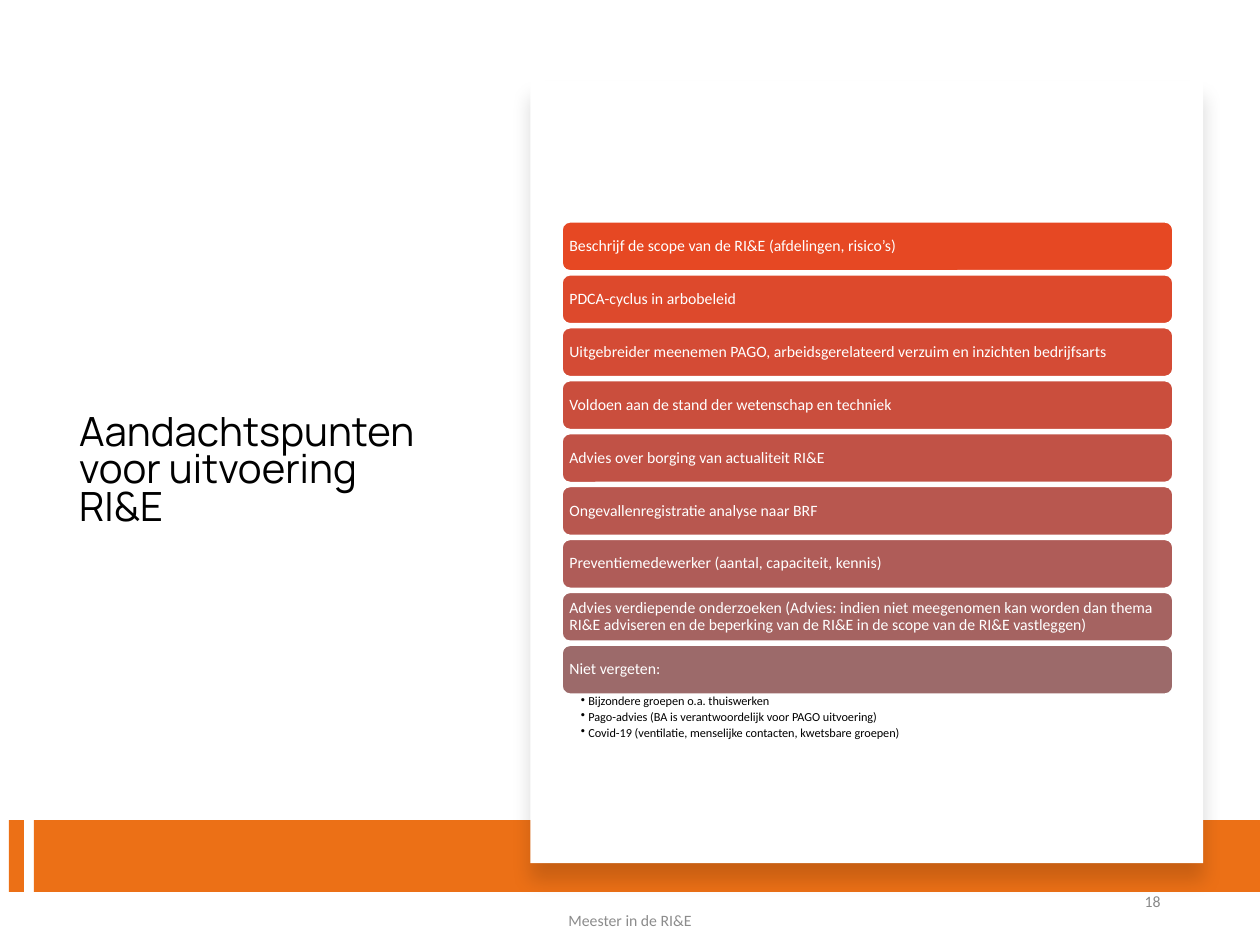
"""Build the slide with points of attention for carrying out an RI&E."""
from lxml import etree
from pptx import Presentation
from pptx.dml.color import RGBColor
from pptx.enum.shapes import MSO_SHAPE
from pptx.enum.text import MSO_ANCHOR, PP_ALIGN
from pptx.oxml.ns import qn
from pptx.util import Inches, Pt

RECT, ROUND = MSO_SHAPE.RECTANGLE, MSO_SHAPE.ROUNDED_RECTANGLE
LEFT, MID, RIGHT = PP_ALIGN.LEFT, PP_ALIGN.CENTER, PP_ALIGN.RIGHT
TOP, MIDDLE = MSO_ANCHOR.TOP, MSO_ANCHOR.MIDDLE

COLORS = {
    "orange": "EC7016", "white": "FFFFFF", "black": "000000",
    "foot": "8C8C8C", "number": "898989",
}
BARS = [
    ("E64823", "Beschrijf de scope van de RI&E (afdelingen, risico’s)"),
    ("DD492C", "PDCA-cyclus in arbobeleid"),
    ("D44B35", "Uitgebreider meenemen PAGO, arbeidsgerelateerd verzuim en inzichten bedrijfsarts"),
    ("CA4E3D", "Voldoen aan de stand der wetenschap en techniek"),
    ("C15246", "Advies over borging van actualiteit RI&E"),
    ("B8574F", "Ongevallenregistratie analyse naar BRF"),
    ("AF5C58", "Preventiemedewerker (aantal, capaciteit, kennis)"),
    ("A56361", "Advies verdiepende onderzoeken (Advies: indien niet meegenomen kan worden "
               "dan thema RI&E adviseren en de beperking van de RI&E in de scope van de "
               "RI&E vastleggen)"),
    ("9C6A6A", "Niet vergeten:"),
]
NOTES = [
    "Bijzondere groepen o.a. thuiswerken",
    "Pago-advies (BA is verantwoordelijk voor PAGO uitvoering)",
    "Covid-19 (ventilatie, menselijke contacten, kwetsbare groepen)",
]

deck = Presentation()
deck.slide_width, deck.slide_height = Inches(10), Inches(7.5)
slide = deck.slides.add_slide(deck.slide_layouts[6])


def add_box(kind, place, color):
    box = slide.shapes.add_shape(kind, *map(Inches, place))
    box.shadow.inherit = False
    box.fill.solid()
    box.fill.fore_color.rgb = RGBColor.from_string(color)
    box.line.fill.background()
    return box


def write(shape, lines, size, color, font="Calibri", align=LEFT, anchor=MIDDLE,
          inset=(0.1, 0.05, 0.1, 0.05), **form):
    frame = shape.text_frame
    sides = ("margin_left", "margin_top", "margin_right", "margin_bottom")
    look = {"word_wrap": True, "vertical_anchor": anchor}
    look.update(zip(sides, map(Inches, inset)))
    for name, value in look.items():
        setattr(frame, name, value)
    for i, line in enumerate(lines):
        para = frame.add_paragraph() if i else frame.paragraphs[0]
        for name, value in {"alignment": align, **form}.items():
            setattr(para, name, value)
        run = para.add_run()
        run.text = line
        for name, value in {"name": font, "size": Pt(size)}.items():
            setattr(run.font, name, value)
        run.font.color.rgb = RGBColor.from_string(color)
    return frame


for left, width in [(0.07, 0.12), (0.27, 9.73)]:
    add_box(RECT, (left, 6.51, width, 0.57), COLORS["orange"])

card = add_box(RECT, (4.21, 0.64, 5.34, 6.21), COLORS["white"])
glow = etree.SubElement(
    card.element.spPr.find(qn("a:effectLst")), qn("a:outerShdw"),
    blurRad=str(Pt(11)), dist=str(Pt(10)), dir="5400000", algn="t", rotWithShape="0")
tint = etree.SubElement(glow, qn("a:srgbClr"), val=COLORS["black"])
etree.SubElement(tint, qn("a:alpha"), val="15000")

texts = [
    ((0.53, 1.2, 3, 5.1), "Aandachtspunten voor uitvoering RI&E", 23, "black",
     {"font": "Manrope", "line_spacing": 0.78}),
    ((3.31, 7.1, 3.38, 0.4), "Meester in de RI&E", 9, "foot",
     {"align": MID, "space_after": Pt(6)}),
    ((7.06, 6.95, 2.25, 0.4), "18", 9, "number", {"align": RIGHT}),
]
for place, text, size, color, form in texts:
    write(slide.shapes.add_textbox(*map(Inches, place)), [text], size, COLORS[color], **form)

for i, (color, text) in enumerate(BARS):
    bar = add_box(ROUND, (4.46, 1.76 + 0.42 * i, 4.85, 0.39), color)
    bar.line.color.rgb = RGBColor.from_string(COLORS["white"])
    bar.line.width = Pt(1)
    write(bar, [text], 9, COLORS["white"], inset=(0.04,) * 4, line_spacing=0.9)

notes = slide.shapes.add_textbox(*map(Inches, (4.46, 5.51, 4.85, 0.4)))
frame = write(notes, NOTES, 7, COLORS["black"], anchor=TOP,
              inset=(0.15, 0.01, 0.07, 0.01), line_spacing=0.9, space_after=Pt(1.4))
for para in frame.paragraphs:
    props = para._p.get_or_add_pPr()
    props.set("marL", str(Inches(0.06)))
    props.set("indent", str(Inches(-0.06)))
    etree.SubElement(props, qn("a:buChar"), char="•")

deck.save("out.pptx")
